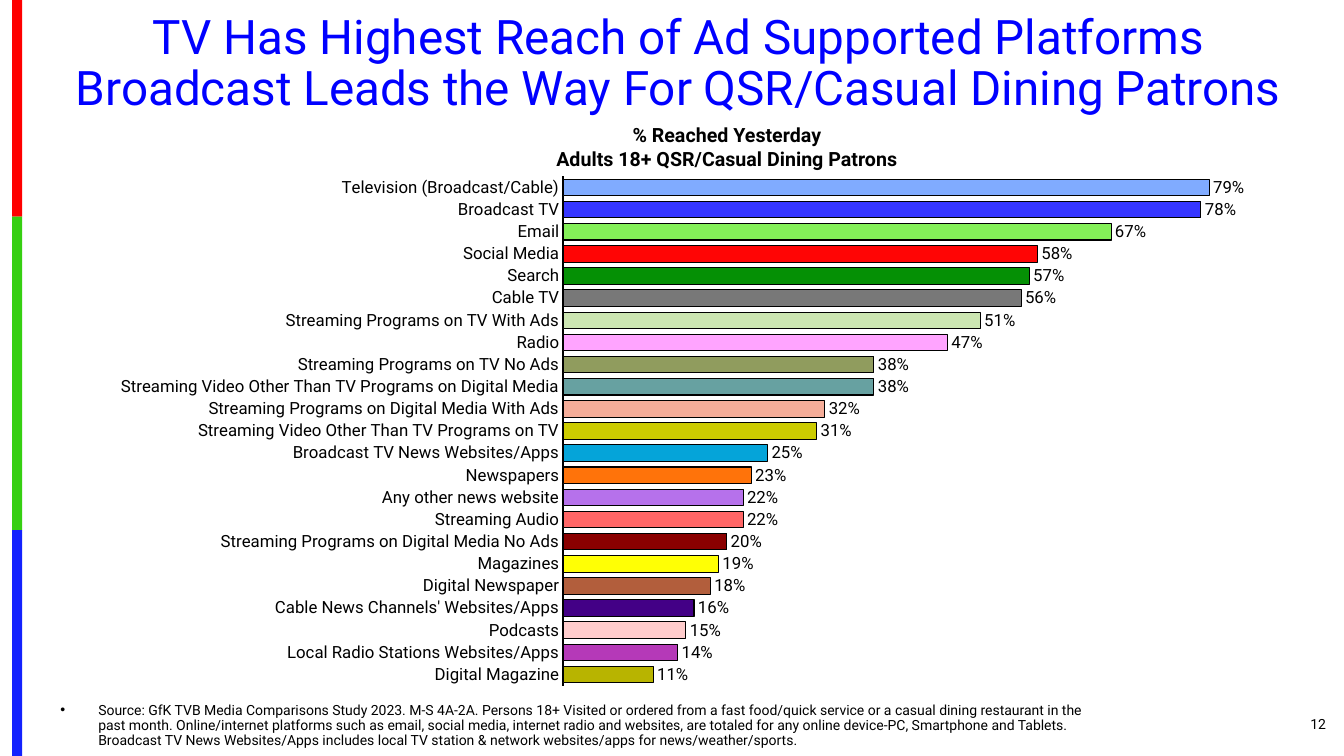
from lxml.etree import SubElement
from pptx import Presentation
from pptx.chart.data import CategoryChartData
from pptx.dml.color import RGBColor
from pptx.enum.chart import XL_CHART_TYPE, XL_LABEL_POSITION, XL_TICK_MARK
from pptx.enum.shapes import MSO_SHAPE
from pptx.enum.text import MSO_ANCHOR, MSO_AUTO_SIZE, PP_ALIGN
from pptx.oxml.ns import qn
from pptx.util import Inches, Pt

# Content
FONT = "Roboto"
TITLE = ("TV Has Highest Reach of Ad Supported Platforms "
         "Broadcast Leads the Way For QSR/Casual Dining Patrons")
HEADING = ["% Reached Yesterday", "Adults 18+ QSR/Casual Dining Patrons"]
SOURCE = (
    "Source: GfK TVB Media Comparisons Study 2023. M-S 4A-2A. Persons 18+ Visited or "
    "ordered from a fast food/quick service or a casual dining restaurant in the past "
    "month. Online/internet platforms such as email, social media, internet radio and "
    "websites, are totaled for any online device-PC, Smartphone and Tablets. Broadcast TV "
    "News Websites/Apps includes local TV station & network websites/apps for "
    "news/weather/sports.")
PAGE = "12"
REACH = [
    ("Television (Broadcast/Cable)", 0.79, "80ABFF"),
    ("Broadcast TV", 0.78, "3636FF"),
    ("Email", 0.67, "84F058"),
    ("Social Media", 0.58, "FF0505"),
    ("Search", 0.57, "059005"),
    ("Cable TV", 0.56, "787878"),
    ("Streaming Programs on TV With Ads", 0.51, "CCE6B2"),
    ("Radio", 0.47, "FFA4FF"),
    ("Streaming Programs on TV No Ads", 0.38, "909C5E"),
    ("Streaming Video Other Than TV Programs on Digital Media", 0.38, "67A1A1"),
    ("Streaming Programs on Digital Media With Ads", 0.32, "F5AD99"),
    ("Streaming Video Other Than TV Programs on TV", 0.31, "CCCC00"),
    ("Broadcast TV News Websites/Apps", 0.25, "05A4D9"),
    ("Newspapers", 0.23, "FF730A"),
    ("Any other news website", 0.22, "B671EB"),
    ("Streaming Audio", 0.22, "FF6666"),
    ("Streaming Programs on Digital Media No Ads", 0.20, "8A0000"),
    ("Magazines", 0.19, "FFFF05"),
    ("Digital Newspaper", 0.18, "B25E3C"),
    ("Cable News Channels' Websites/Apps", 0.16, "430086"),
    ("Podcasts", 0.15, "FFCCCC"),
    ("Local Radio Stations Websites/Apps", 0.14, "B539B8"),
    ("Digital Magazine", 0.11, "B8B400"),
]
STRIPES = [("FE0000", 2.15), ("36CF12", 3.11), ("1322FE", 2.24)]
PLOT = {"x": 0.413, "y": 0.047, "w": 0.565, "h": 0.946}


def color(code):
    return RGBColor.from_string(code)


def style(font, size, code="000000", bold=False):
    font.name, font.size, font.bold = FONT, Pt(size), bold
    font.color.rgb = color(code)


def place(shape, left, top, width, height):
    shape.left, shape.top = Inches(left), Inches(top)
    shape.width, shape.height = Inches(width), Inches(height)


def write(shape, lines, size, code="000000", bold=False,
          align=PP_ALIGN.LEFT, anchor=MSO_ANCHOR.TOP, space=1.0):
    frame = shape.text_frame
    frame.text = "\n".join(lines)
    frame.word_wrap = True
    frame.auto_size = MSO_AUTO_SIZE.NONE
    frame.vertical_anchor = anchor
    for para in frame.paragraphs:
        para.alignment = align
        para.line_spacing = space
        para.space_before = Pt(0)
        style(para.font, size, code, bold)


deck = Presentation()
deck.slide_width, deck.slide_height = Inches(13.33), Inches(7.5)
slide = deck.slides.add_slide(deck.slide_layouts[1])
shapes = slide.shapes

# Stripes down the left edge
top = 0
for code, height in STRIPES:
    stripe = shapes.add_shape(MSO_SHAPE.RECTANGLE, Inches(0.12), Inches(top),
                              Inches(0.1), Inches(height))
    stripe.shadow.inherit = False
    stripe.fill.solid()
    stripe.fill.fore_color.rgb = color(code)
    stripe.line.fill.background()
    top += height

# Title
title = shapes.title
place(title, 0.38, 0.08, 12.7, 1.13)
write(title, [TITLE], 34, "0000FF", align=PP_ALIGN.CENTER, space=0.9)

# Source note
note = slide.placeholders[1]
place(note, 0.5, 6.92, 10.42, 0.56)
props = note.text_frame.paragraphs[0]._p.get_or_add_pPr()
props.set("marL", "0")
props.set("indent", "0")
SubElement(props, qn("a:buNone"))
write(note, [SOURCE], 10, anchor=MSO_ANCHOR.BOTTOM, space=0.9)

# Reach chart
data = CategoryChartData(number_format="0%")
data.categories = [name for name, _, _ in REACH]
data.add_series("Series 1", [value for _, value, _ in REACH])
chart = shapes.add_chart(XL_CHART_TYPE.BAR_CLUSTERED, Inches(0.25), Inches(1.5),
                         Inches(12.92), Inches(5.34), data).chart
chart.has_legend = chart.has_title = False
style(chart.font, 10)

names = chart.category_axis
names.reverse_order = True
names.major_tick_mark = names.minor_tick_mark = XL_TICK_MARK.NONE
names.format.line.color.rgb = color("000000")
names.format.line.width = Pt(1.5)
style(names.tick_labels.font, 12)

scale = chart.value_axis
scale.minimum_scale, scale.maximum_scale = 0, 0.9
scale.has_major_gridlines = False
scale.visible = False

plot = chart.plots[0]
plot.gap_width = 34
plot.vary_by_categories = False
plot.has_data_labels = True
labels = plot.data_labels
labels.show_value = True
labels.number_format, labels.number_format_is_linked = "0%", False
labels.position = XL_LABEL_POSITION.OUTSIDE_END
style(labels.font, 12)

bars = plot.series[0]
for spot, (_, _, code) in enumerate(REACH):
    look = bars.points[spot].format
    look.fill.solid()
    look.fill.fore_color.rgb = color(code)
    look.line.color.rgb = color("000000")
    look.line.width = Pt(0.75)

# Fixed inner plot area
area = chart._chartSpace.chart.plotArea
layout = area.find(qn("c:layout"))
if layout is None:
    layout = SubElement(area, qn("c:layout"))
    area.insert(0, layout)
manual = SubElement(layout, qn("c:manualLayout"))
rules = {"layoutTarget": "inner", "xMode": "edge", "yMode": "edge", **PLOT}
for tag, value in rules.items():
    SubElement(manual, qn("c:" + tag)).set("val", str(value))

# Chart heading and page number
heading = shapes.add_textbox(Inches(3.42), Inches(1.17), Inches(7.58), Inches(0.57))
write(heading, HEADING, 14, bold=True, align=PP_ALIGN.CENTER)
page = shapes.add_textbox(Inches(12.17), Inches(6.98), Inches(1.08), Inches(0.4))
write(page, [PAGE], 10, align=PP_ALIGN.RIGHT, anchor=MSO_ANCHOR.MIDDLE)

deck.save("out.pptx")
